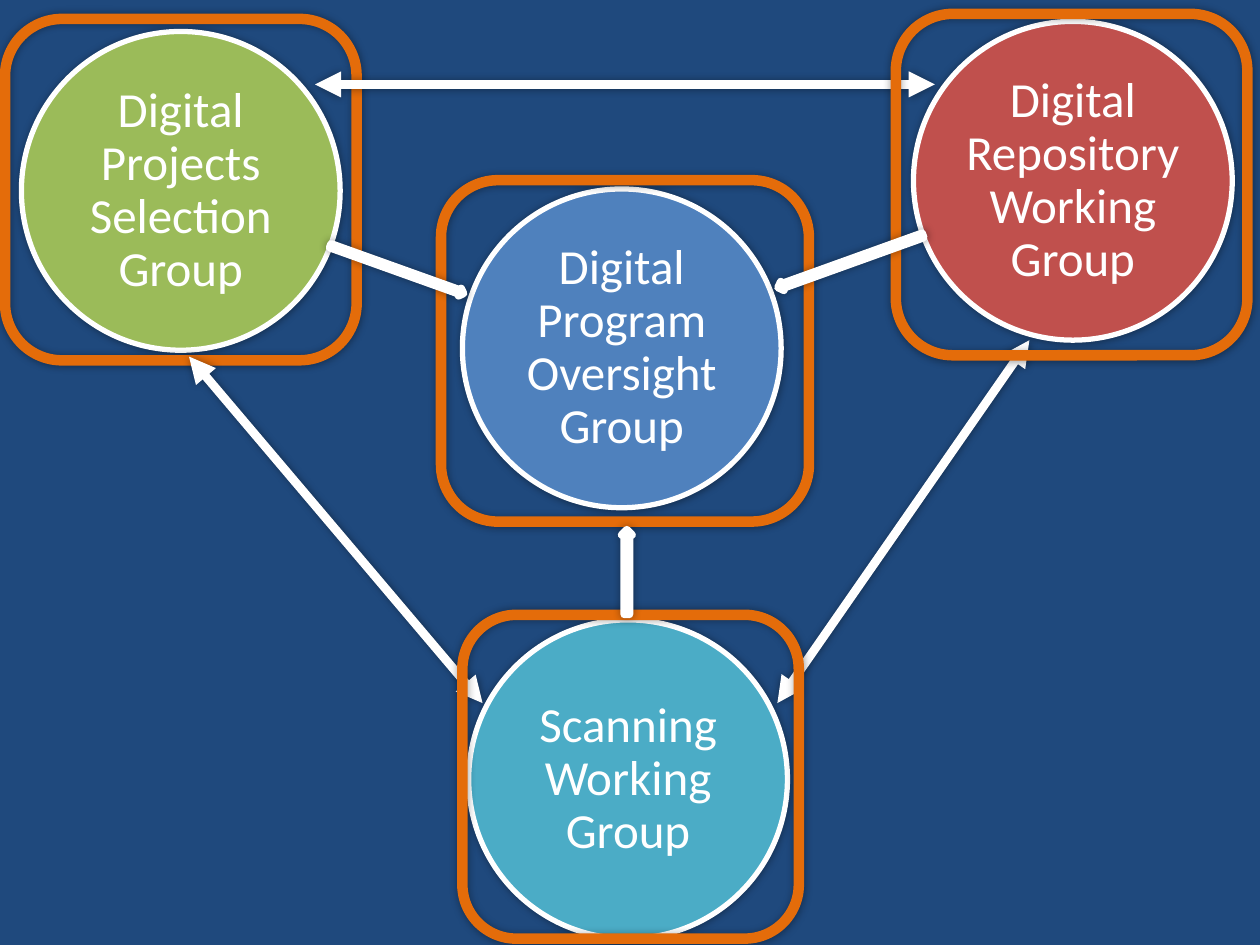
from lxml import etree
from pptx import Presentation
from pptx.dml.color import RGBColor
from pptx.enum import shapes as kinds, text
from pptx.oxml.ns import qn
from pptx.util import Inches, Pt

NAVY = RGBColor(0x1F, 0x49, 0x7D)
WHITE = RGBColor(0xFF, 0xFF, 0xFF)
ORANGE = RGBColor(0xE4, 0x6C, 0x0A)
GREEN = RGBColor(0x9B, 0xBB, 0x59)
BLUE = RGBColor(0x4F, 0x81, 0xBD)
RED = RGBColor(0xC0, 0x50, 0x4D)
TEAL = RGBColor(0x4B, 0xAC, 0xC6)

SIZE = 2.53  # diameter of every circle
FORM = kinds.MSO_SHAPE

# label, colour, circle left and top, frame box
SELECT = ("Digital Projects Selection Group", GREEN, (0.17, 0.25),
          (0.04, 0.15, 2.79, 2.71))
HUB = ("Digital Program Oversight Group", BLUE, (3.67, 1.5),
       (3.5, 1.43, 2.92, 2.71))
STORE = ("Digital Repository Working Group", RED, (7.25, 0.17),
         (7.11, 0.11, 2.79, 2.71))
SCAN = ("Scanning Working Group", TEAL, (3.72, 4.92),
        (3.67, 4.88, 2.67, 2.57))

LINKS = [((2.5, 0.67), (7.42, 0.67)),
         ((1.5, 2.83), (3.83, 5.58)),
         ((6.17, 5.58), (8.17, 2.7))]

# box and rotation of the arrows that point to the hub
ARROWS = [((2.59, 2.11, 1.12, 0.06), 19.7),
          ((6.14, 2.04, 1.22, 0.07), 160.2),
          ((4.64, 4.5, 0.67, 0.08), 270)]


def style(item, color, width):
    """Give a shape or connector its line and a soft shadow."""
    item.line.color.rgb = color
    item.line.width = Pt(width)
    props = item._element.spPr
    glow = etree.SubElement(props, qn("a:effectLst"))
    shade = etree.SubElement(glow, qn("a:outerShdw"), blurRad=str(Pt(5)),
                             dist="0", dir="0", rotWithShape="0")
    tint = etree.SubElement(shade, qn("a:srgbClr"), val="000000")
    etree.SubElement(tint, qn("a:alpha"), val="40000")


def add_form(parent, form, box, line, width, fill=None):
    shape = parent.add_shape(form, *map(Inches, box))
    if fill is None:
        shape.fill.background()
    else:
        shape.fill.solid()
        shape.fill.fore_color.rgb = fill
    style(shape, line, width)
    return shape


def add_team(slide, label, color, spot, frame):
    """Group a labelled circle with its orange frame."""
    group = slide.shapes.add_group_shape().shapes
    disc = add_form(group, FORM.OVAL, (*spot, SIZE, SIZE), WHITE, 3, color)
    body = disc.text_frame
    body.word_wrap = True
    body.vertical_anchor = text.MSO_ANCHOR.MIDDLE
    for side in ("left", "top", "right", "bottom"):
        setattr(body, f"margin_{side}", Inches(0.02))
    para = body.paragraphs[0]
    para.alignment = text.PP_ALIGN.CENTER
    para.line_spacing = 0.9
    run = para.add_run()
    run.text = label
    for name, value in {"name": "Calibri", "size": Pt(28)}.items():
        setattr(run.font, name, value)
    run.font.color.rgb = WHITE
    add_form(group, FORM.ROUNDED_RECTANGLE, frame, ORANGE, 6)


def add_link(slide, start, end):
    """Draw a line with an arrowhead at both ends."""
    link = slide.shapes.add_connector(kinds.MSO_CONNECTOR.STRAIGHT,
                                      *map(Inches, (*start, *end)))
    style(link, WHITE, 5)
    for tip in ("a:headEnd", "a:tailEnd"):
        etree.SubElement(link.line._get_or_add_ln(), qn(tip), type="triangle")


def add_arrow(slide, box, turn):
    arrow = add_form(slide.shapes, FORM.RIGHT_ARROW, box, WHITE, 4.5)
    arrow.rotation = turn


def main():
    deck = Presentation()
    deck.slide_width, deck.slide_height = Inches(10), Inches(7.5)
    slide = deck.slides.add_slide(deck.slide_layouts[6])
    slide.background.fill.solid()
    slide.background.fill.fore_color.rgb = NAVY

    add_team(slide, *SELECT)
    for start, end in LINKS:
        add_link(slide, start, end)
    for team in (HUB, STORE, SCAN):
        add_team(slide, *team)
    for box, turn in ARROWS:
        add_arrow(slide, box, turn)
    deck.save("out.pptx")


if __name__ == "__main__":
    main()
